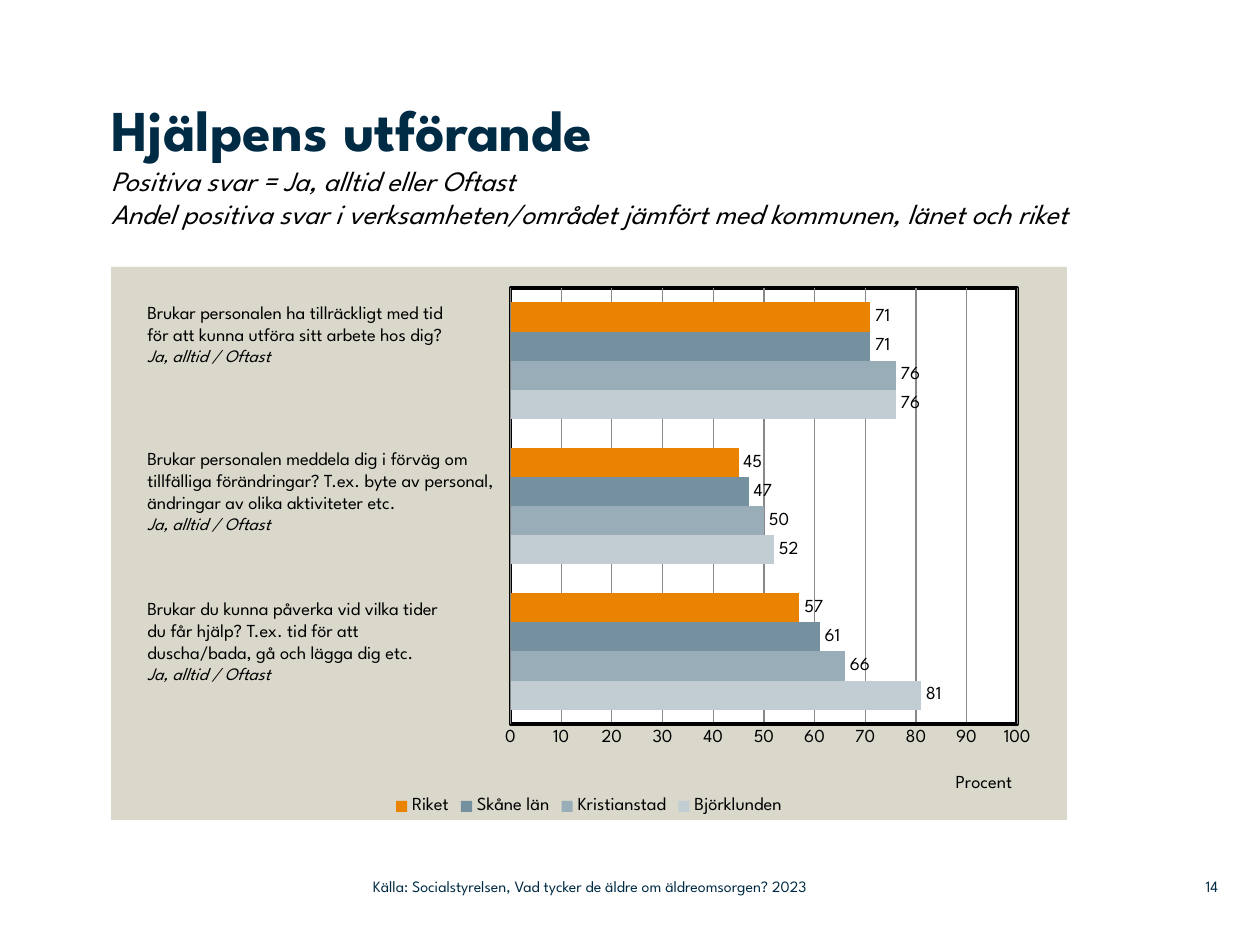
"""Build the slide on how help is carried out, with a clustered bar chart."""
from pptx import Presentation, util as u
from pptx.chart.data import CategoryChartData
from pptx.dml.color import RGBColor
from pptx.enum import chart as ch, text
from pptx.oxml import parse_xml
from pptx.oxml.ns import nsdecls, qn

PX = 914400 / 126
theme = {
    "font": "League Spartan", "navy": "002B45", "black": "000000",
    "panel": "DAD7CB", "plot": "FFFFFF", "grid": "888888",
    "bars": ["C2CDD3", "99ADB9", "75909F", "E98300"],
    "head": 33, "sub": 16, "body": 10.5, "note": 10, "foot": 9,
}


def write(frame, line, size, color="black", first=False, bold=False,
          italic=False, align=text.PP_ALIGN.LEFT):
    para = frame.paragraphs[0] if first else frame.add_paragraph()
    para.alignment = align
    run = para.add_run()
    run.text = line
    font = run.font
    font.name, font.size = theme["font"], u.Pt(theme[size])
    font.bold, font.italic = bold, italic
    font.color.rgb = RGBColor.from_string(theme[color])


def place(node, **spots):
    old = node.find(qn("c:layout"))
    modes = "".join(f'<c:{k}Mode val="edge"/>' for k in "xy")
    vals = "".join(f'<c:{k} val="{v}"/>' for k, v in spots.items())
    inner = '<c:layoutTarget val="inner"/>' if "w" in spots else ""
    new = parse_xml(f'<c:layout {nsdecls("c")}><c:manualLayout>{inner}{modes}{vals}'
                    '</c:manualLayout></c:layout>')
    if old is None:
        node.insert(0, new)
    else:
        node.replace(old, new)


deck = Presentation()
deck.slide_width, deck.slide_height = u.Inches(10), u.Inches(7.5)
slide = deck.slides.add_slide(deck.slide_layouts[5])

data = CategoryChartData()
data.categories = ["1", "2", "3"]
for name, vals in [("Björklunden", (81, 52, 76)), ("Kristianstad", (66, 50, 76)),
                   ("Skåne län", (61, 47, 71)), ("Riket", (57, 45, 71))]:
    data.add_series(name, vals)
spot = [round(n * PX) for n in (111, 267, 956, 553)]
chart = slide.shapes.add_chart(ch.XL_CHART_TYPE.BAR_CLUSTERED, *spot, data).chart
chart.has_title = False
chart.font.name, chart.font.size = theme["font"], u.Pt(theme["body"])
chart.font.color.rgb = RGBColor.from_string(theme["black"])
chart.has_legend = True
chart.legend.position = ch.XL_LEGEND_POSITION.BOTTOM
chart.legend.include_in_layout = False

plot = chart.plots[0]
plot.gap_width, plot.overlap, plot.vary_by_categories = 100, 0, False
for series, color in zip(plot.series, theme["bars"]):
    series.format.fill.solid()
    series.format.fill.fore_color.rgb = RGBColor.from_string(color)
    series.invert_if_negative = False
    labels = series.data_labels
    labels.show_value = True
    labels.position = ch.XL_LABEL_POSITION.OUTSIDE_END
    labels.font.name, labels.font.size = theme["font"], u.Pt(theme["body"])

chart.category_axis.visible = False
axis = chart.value_axis
axis.minimum_scale, axis.maximum_scale, axis.major_unit = 0, 100, 10
axis.major_tick_mark = axis.minor_tick_mark = ch.XL_TICK_MARK.NONE
axis.has_major_gridlines = True
for line, color, width in [(axis.format.line, "black", 2),
                           (axis.major_gridlines.format.line, "grid", 0.75)]:
    line.color.rgb = RGBColor.from_string(theme[color])
    line.width = u.Pt(width)
write(axis.axis_title.text_frame, "Procent", "body", first=True)
place(axis.axis_title._element, x=0.88, y=0.91)

root = chart._chartSpace
area = root.find(".//" + qn("c:plotArea"))
place(area, x=0.418, y=0.038, w=0.53, h=0.789)
skin = '<c:spPr {}><a:solidFill><a:srgbClr val="{}"/></a:solidFill><a:ln{}</a:ln></c:spPr>'
edge = f' w="25400"><a:solidFill><a:srgbClr val="{theme["black"]}"/></a:solidFill>'
area.append(parse_xml(skin.format(nsdecls("c", "a"), theme["plot"], edge)))
root.find(qn("c:chart")).addnext(
    parse_xml(skin.format(nsdecls("c", "a"), theme["panel"], "><a:noFill/>")))

title = slide.shapes.title
title.left, title.top, title.width, title.height = [round(n * PX) for n in (111, 94, 982, 152)]
frame = title.text_frame
frame.margin_left = frame.margin_top = frame.margin_right = frame.margin_bottom = 0
frame.vertical_anchor = text.MSO_ANCHOR.TOP
frame.auto_size, frame.word_wrap = text.MSO_AUTO_SIZE.NONE, True
write(frame, "Hjälpens utförande", "head", "navy", first=True, bold=True)
for line in ["Positiva svar = Ja, alltid eller Oftast",
             "Andel positiva svar i verksamheten/området jämfört med kommunen, länet och riket"]:
    write(frame, line, "sub", italic=True)

for top, high, lines in [
    (295, 102, ["Brukar personalen ha tillräckligt med tid",
                "för att kunna utföra sitt arbete hos dig?"]),
    (441, 123, ["Brukar personalen meddela dig i förväg om tillfälliga förändringar? "
                "T.ex. byte av personal, ändringar av olika aktiviteter etc."]),
    (591, 102, ["Brukar du kunna påverka vid vilka tider", "du får hjälp? T.ex. tid för att",
                "duscha/bada, gå och lägga dig etc."]),
]:
    box = slide.shapes.add_textbox(*[round(n * PX) for n in (135, top, 377, high)])
    frame = box.text_frame
    frame.word_wrap = True
    for i, line in enumerate(lines):
        write(frame, line, "body", first=i == 0)
    write(frame, "Ja, alltid / Oftast", "note", italic=True)

for left, wide, line, align in [
    (1159, 59, "14", text.PP_ALIGN.RIGHT),
    (373, 558, "Källa: Socialstyrelsen, Vad tycker de äldre om äldreomsorgen? 2023",
     text.PP_ALIGN.LEFT),
]:
    box = slide.shapes.add_textbox(*[round(n * PX) for n in (left, 868, wide, 37)])
    frame = box.text_frame
    frame.margin_left = frame.margin_top = frame.margin_right = frame.margin_bottom = 0
    frame.vertical_anchor, frame.word_wrap = text.MSO_ANCHOR.MIDDLE, True
    write(frame, line, "foot", "navy", first=True, align=align)

deck.save("out.pptx")
